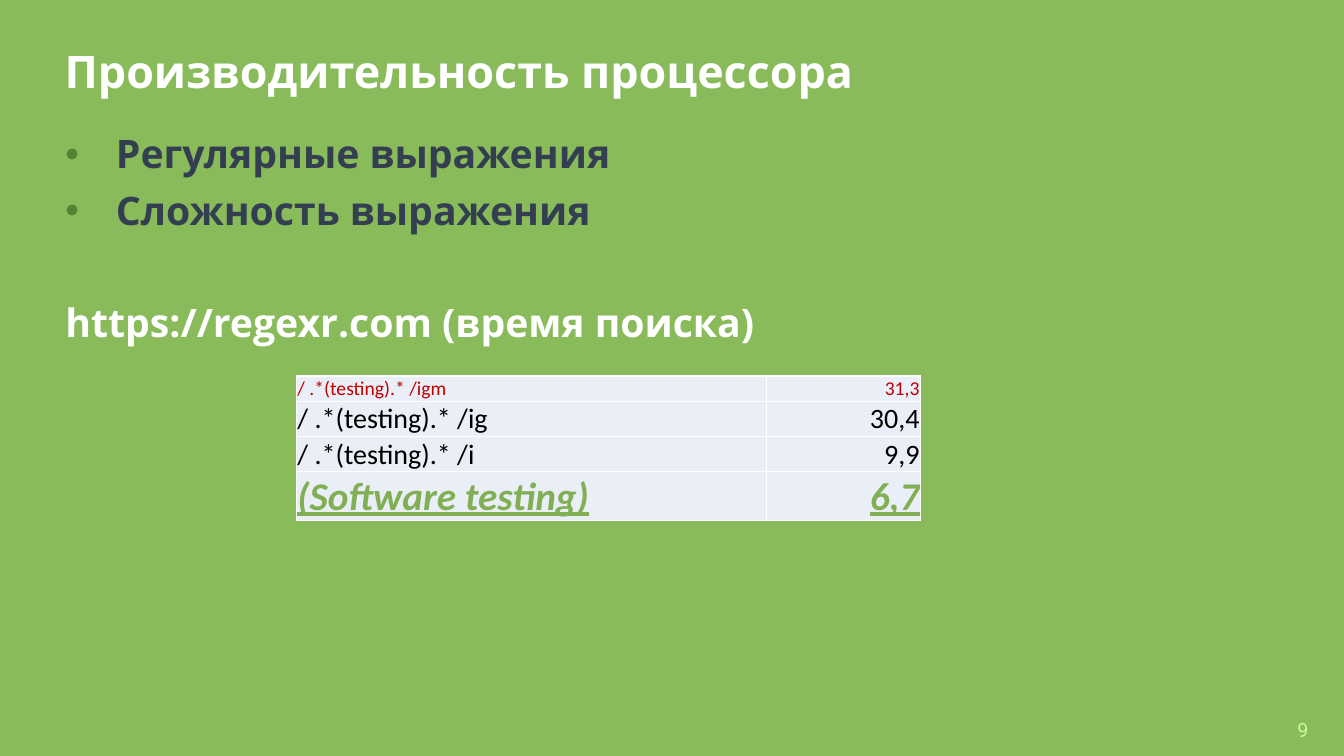
from lxml import etree
from pptx import Presentation, util as u
from pptx.dml.color import RGBColor
from pptx.enum import text
from pptx.oxml import ns

HEADING_FONT = "Open Sans"
RIGHT = text.PP_ALIGN.RIGHT
RESULTS = [  # expression, time, row height, size, colour, emphasis
    ("/ .*(testing).* /igm", "31,3", 0.25, 14, "C00000", False),
    ("/ .*(testing).* /ig", "30,4", 0.35, 20, "000000", False),
    ("/ .*(testing).* /i", "9,9", 0.35, 20, "000000", False),
    ("(Software testing)", "6,7", 0.46, 28, "81AF54", True),
]


def colour(value):
    return RGBColor.from_string(value)


def style(para, font, size, value, bold=False):
    para.font.name = font
    para.font.size = u.Pt(size)
    para.font.color.rgb = colour(value)
    para.font.bold = bold


def set_frame(frame, left=0.0, top=0.0, right=0.0, bottom=0.0):
    frame.word_wrap = True
    frame.auto_size = text.MSO_AUTO_SIZE.NONE
    frame.vertical_anchor = text.MSO_ANCHOR.TOP
    frame.margin_left, frame.margin_top = u.Inches(left), u.Inches(top)
    frame.margin_right, frame.margin_bottom = u.Inches(right), u.Inches(bottom)


def add_bullet(para, value):
    props = para._p.get_or_add_pPr()
    props.set("marL", str(u.Inches(0.5)))
    props.set("indent", str(-u.Inches(0.5)))
    bullet_colour = etree.SubElement(props, ns.qn("a:buClr"))
    etree.SubElement(bullet_colour, ns.qn("a:srgbClr"), val=value)
    etree.SubElement(props, ns.qn("a:buFont"), typeface="Arial")
    etree.SubElement(props, ns.qn("a:buChar"), char="•")


def add_border(cell, value):
    props = cell._tc.get_or_add_tcPr()
    for index, side in enumerate(("a:lnL", "a:lnR", "a:lnT", "a:lnB")):
        line = etree.Element(ns.qn(side), w=str(u.Pt(1)))
        fill = etree.SubElement(line, ns.qn("a:solidFill"))
        etree.SubElement(fill, ns.qn("a:srgbClr"), val=value)
        props.insert(index, line)


def place_title(page, left, top, width, height):
    title = page.shapes.title
    title.left, title.top = u.Inches(left), u.Inches(top)
    title.width, title.height = u.Inches(width), u.Inches(height)
    set_frame(title.text_frame)
    title.text_frame.text = "Производительность процессора"
    para = title.text_frame.paragraphs[0]
    para.alignment = text.PP_ALIGN.LEFT
    para.line_spacing = 0.9
    style(para, HEADING_FONT, 32, "FFFFFF", True)


def add_topics(page, *bounds):
    frame = page.shapes.add_textbox(*map(u.Inches, bounds)).text_frame
    set_frame(frame, 0, 0.05, 0.1, 0.05)
    topics = [  # wording, space before, colour, bulleted
        ("Регулярные выражения", 0, "333F50", True),
        ("Сложность выражения", 10, "333F50", True),
        ("https://regexr.com (время поиска)", 50, "FFFFFF", False),
    ]
    for index, (wording, gap, value, bulleted) in enumerate(topics):
        para = frame.add_paragraph() if index else frame.paragraphs[0]
        para.text = wording
        para.line_spacing = 0.9
        para.space_before = u.Pt(gap)
        if bulleted:
            add_bullet(para, "548235")
        style(para, HEADING_FONT, 28, value, True)


def add_results(page, left, top, widths):
    height = sum(row[2] for row in RESULTS)
    bounds = map(u.Inches, (left, top, sum(widths), height))
    table = page.shapes.add_table(len(RESULTS), len(widths), *bounds).table
    for column, width in zip(table.columns, widths):
        column.width = u.Inches(width)
    for row, (pattern, time, tall, size, value, emphasis) in zip(table.rows, RESULTS):
        row.height = u.Inches(tall)
        for cell, wording in zip(row.cells, (pattern, time)):
            cell.margin_left = cell.margin_right = cell.margin_top = u.Inches(0.01)
            cell.margin_bottom = 0
            cell.vertical_anchor = text.MSO_ANCHOR.BOTTOM
            cell.fill.solid()
            cell.fill.fore_color.rgb = colour("EAEFF7")
            add_border(cell, "FFFFFF")
            cell.text = wording
            para = cell.text_frame.paragraphs[0]
            style(para, "Calibri", size, value, emphasis)
            para.font.italic = para.font.underline = emphasis
        para.alignment = RIGHT  # the time, in the last column


def add_page_number(page, *bounds):
    frame = page.shapes.add_textbox(*map(u.Inches, bounds)).text_frame
    set_frame(frame, 0.1, 0.05, 0.1, 0.05)
    frame.text = "9"
    style(frame.paragraphs[0], "Roboto", 14, "CAF89E")


def main():
    deck = Presentation()
    deck.slide_width, deck.slide_height = u.Inches(13.33), u.Inches(7.5)
    page = deck.slides.add_slide(deck.slide_layouts[5])
    page.background.fill.solid()
    page.background.fill.fore_color.rgb = colour("8ABB5A")
    place_title(page, 0.64, 0.49, 12.05, 0.73)
    add_topics(page, 0.65, 1.29, 12.04, 5.53)
    add_results(page, 2.94, 3.73, (4.66, 1.53))
    add_page_number(page, 12.77, 7.07, 0.52, 0.34)
    deck.save("out.pptx")


if __name__ == "__main__":
    main()
